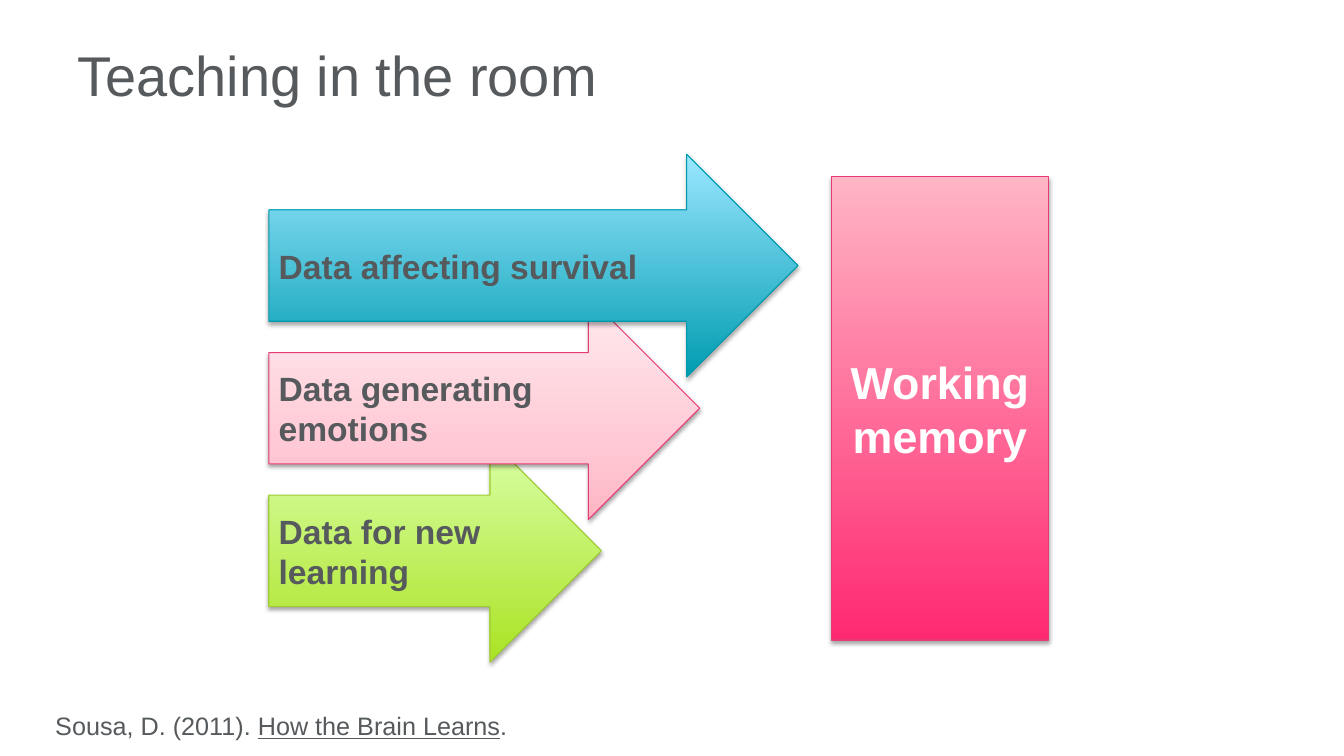
import pptx
import pptx.dml.color
import pptx.enum.shapes
import pptx.enum.text
import pptx.oxml
import pptx.oxml.ns
import pptx.util
from dataclasses import dataclass

COLUMNS, ROWS = 80, 45
CELL = pptx.util.Inches(7.5) // ROWS
ARROW = pptx.enum.shapes.MSO_SHAPE.RIGHT_ARROW
BLOCK = pptx.enum.shapes.MSO_SHAPE.RECTANGLE
ALIGN = pptx.enum.text.PP_ALIGN
ANCHOR = pptx.enum.text.MSO_ANCHOR


@dataclass(frozen=True)
class Theme:
    font: str = "Arial"
    ink: str = "565A5C"
    white: str = "FFFFFF"
    title: int = 40
    memory: int = 32
    data: int = 24
    citation: int = 18
    outline: float = 0.75
    # Each gradient runs from bottom to top.
    teal: tuple = ((0, "009CB1"), (100, "9AE7FF"))
    teal_edge: str = "0099AD"
    blush: tuple = ((0, "FFB5C4"), (35, "FFCAD5"), (100, "FFEBEF"))
    lime: tuple = ((0, "AAE324"), (100, "DAFFA8"))
    lime_edge: str = "9FCC35"
    pink: tuple = ((0, "FF2972"), (100, "FFB5C4"))
    pink_edge: str = "E63C76"


THEME = Theme()


def grid(*cells):
    return [round(cell * CELL) for cell in cells]


def rgb(value):
    return pptx.dml.color.RGBColor.from_string(value)


def apply(target, formats):
    for key, value in formats.items():
        setattr(target, key, value)


def write(paragraph, text, size, color=THEME.ink, **formats):
    run = paragraph.add_run()
    run.text = text
    apply(run.font, {"name": THEME.font, "size": pptx.util.Pt(size), **formats})
    run.font.color.rgb = rgb(color)


def drawing_xml(xml):
    return pptx.oxml.parse_xml(xml.replace(">", f" {pptx.oxml.ns.nsdecls('a')}>", 1))


def fill_gradient(shape, stops):
    shape.fill.gradient()
    shape.fill.gradient_angle = 90
    stop_list = shape.element.spPr.find(".//" + pptx.oxml.ns.qn("a:gsLst"))
    for stop in list(stop_list):
        stop_list.remove(stop)
    for percent, color in stops:
        stop_list.append(drawing_xml(
            f'<a:gs pos="{percent * 1000}"><a:srgbClr val="{color}"/></a:gs>'))


def cast_shadow(shape):
    shape.shadow.inherit = False
    effects = shape.element.spPr.find(pptx.oxml.ns.qn("a:effectLst"))
    blur, distance = pptx.util.Pt(3.1), pptx.util.Pt(1.8)
    effects.append(drawing_xml(
        f'<a:outerShdw blurRad="{blur}" dist="{distance}" dir="5400000" rotWithShape="0">'
        '<a:srgbClr val="000000"><a:alpha val="35000"/></a:srgbClr></a:outerShdw>'))


def add_panel(slide, kind, area, text, stops, edge, size, color, align):
    """Add a glossy shape with a bold label."""
    panel = slide.shapes.add_shape(kind, *grid(*area))
    fill_gradient(panel, stops)
    panel.line.color.rgb = rgb(edge)
    panel.line.width = pptx.util.Pt(THEME.outline)
    cast_shadow(panel)
    apply(panel.text_frame, {"word_wrap": True, "vertical_anchor": ANCHOR.MIDDLE})
    paragraph = panel.text_frame.paragraphs[0]
    paragraph.alignment = align
    write(paragraph, text, size, color, bold=True)


def add_title(slide, text):
    title = slide.shapes.title
    apply(title, dict(zip(("left", "top", "width", "height"), grid(4, 2.58, 50.34, 7.5))))
    apply(title.text_frame, {"word_wrap": True, "vertical_anchor": ANCHOR.TOP,
                             "auto_size": pptx.enum.text.MSO_AUTO_SIZE.NONE})
    paragraph = title.text_frame.paragraphs[0]
    apply(paragraph, {"alignment": ALIGN.LEFT, "line_spacing": 0.9})
    write(paragraph, text, THEME.title)


def add_data_arrows(slide, arrows):
    """Stack arrows that shorten downwards, each lying over the one below."""
    for row, (text, stops, edge) in reversed(list(enumerate(arrows))):
        area = (16, 9.18 + 8.49 * row, 31.5 - 5.85 * row, 13.26)
        add_panel(slide, ARROW, area, text, stops, edge, THEME.data, THEME.ink, ALIGN.LEFT)


def add_citation(slide, author, work):
    citation = slide.shapes.add_textbox(*grid(2.7, 42, 39, 3))
    citation.text_frame.word_wrap = True
    paragraph = citation.text_frame.paragraphs[0]
    for text, underline in ((author, False), (work, True), (".", False)):
        write(paragraph, text, THEME.citation, underline=underline)


def main():
    deck = pptx.Presentation()
    deck.slide_width, deck.slide_height = grid(COLUMNS, ROWS)
    slide = deck.slides.add_slide(deck.slide_layouts.get_by_name("Title Only"))
    add_title(slide, "Teaching in the room")
    add_data_arrows(slide, [
        ("Data affecting survival", THEME.teal, THEME.teal_edge),
        ("Data generating emotions", THEME.blush, THEME.pink_edge),
        ("Data for new learning", THEME.lime, THEME.lime_edge),
    ])
    add_panel(slide, BLOCK, (49.5, 10.5, 12.9, 27.6), "Working memory",
              THEME.pink, THEME.pink_edge, THEME.memory, THEME.white, ALIGN.CENTER)
    add_citation(slide, "Sousa, D. (2011). ", "How the Brain Learns")
    deck.save("out.pptx")


if __name__ == "__main__":
    main()
